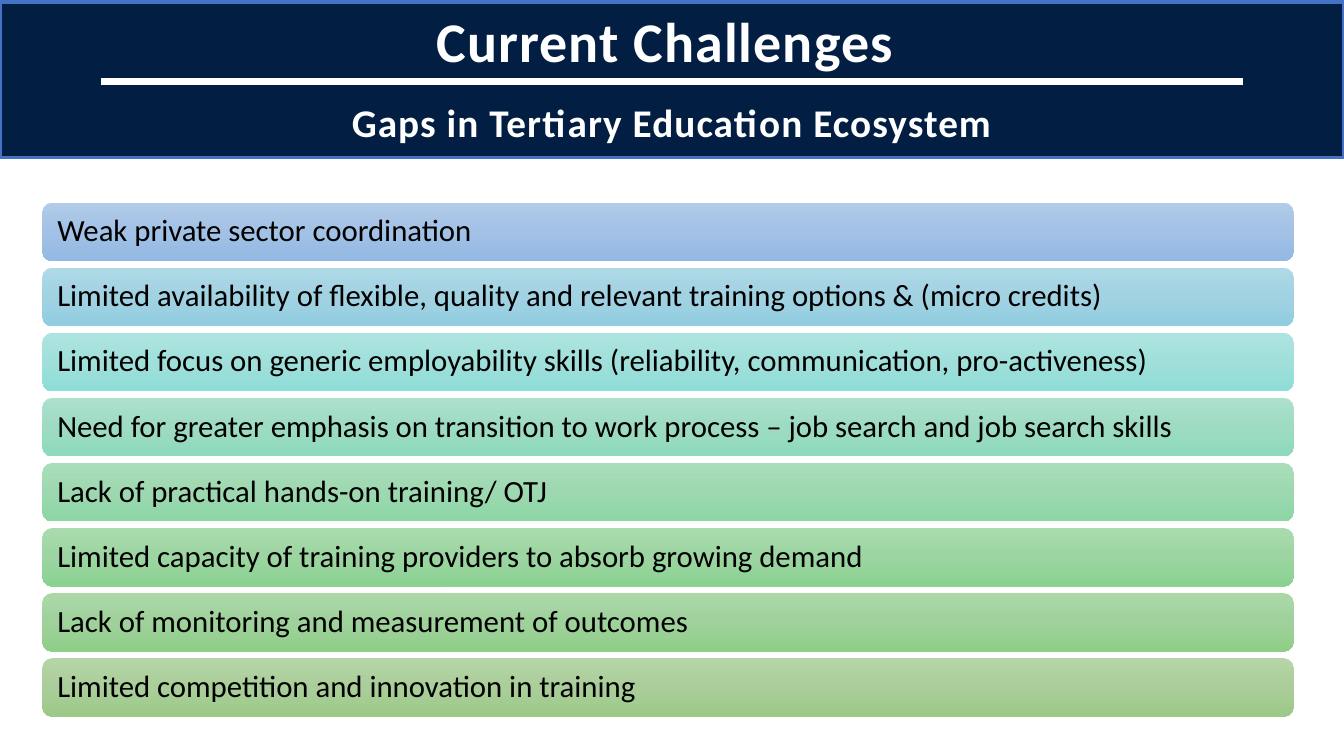
from copy import deepcopy

from lxml.etree import SubElement
from pptx import Presentation
from pptx.dml.color import RGBColor
from pptx.enum.shapes import MSO_CONNECTOR, MSO_SHAPE
from pptx.enum.text import MSO_ANCHOR, PP_ALIGN
from pptx.oxml.ns import qn
from pptx.util import Inches, Pt

COLORS = {
    "navy": "021F43",
    "border": "4472C4",
    "white": "FFFFFF",
    "black": "000000",
}

# Each challenge with the top, middle and bottom colour of its bar
CHALLENGES = [
    ("Weak private sector coordination", ("B1CBE9", "A3C1E5", "93B9E4")),
    ("Limited availability of flexible, quality and relevant training options & (micro credits)",
     ("AFD9E7", "A1D2E2", "90CDE1")),
    ("Limited focus on generic employability skills (reliability, communication, pro-activeness)",
     ("ADE4E0", "A0DFDA", "8EDDD8")),
    ("Need for greater emphasis on transition to work process – job search and job search skills",
     ("ACE1CC", "9EDBC3", "8DDABC")),
    ("Lack of practical hands-on training/ OTJ", ("AADEBB", "9DD8B0", "8BD6A4")),
    ("Limited capacity of training providers to absorb growing demand",
     ("A9DBAE", "9CD5A1", "89D290")),
    ("Lack of monitoring and measurement of outcomes", ("ACD8A8", "9FD19B", "8FCE88")),
    ("Limited competition and innovation in training", ("B5D5A7", "AACE9A", "9CC987")),
]


def set_frame(shape, side, edge):
    shape.shadow.inherit = False
    frame_format = {
        "word_wrap": True,
        "vertical_anchor": MSO_ANCHOR.MIDDLE,
        "margin_left": Inches(side),
        "margin_right": Inches(side),
        "margin_top": Inches(edge),
        "margin_bottom": Inches(edge),
    }
    for name, value in frame_format.items():
        setattr(shape.text_frame, name, value)


def write_line(paragraph, text, size, color, align, spacing, bold=False):
    paragraph.alignment = align
    paragraph.line_spacing = spacing
    run = paragraph.add_run()
    run.text = text
    run.font.color.rgb = RGBColor.from_string(COLORS[color])
    for name, value in {"name": "Calibri", "size": Pt(size), "bold": bold}.items():
        setattr(run.font, name, value)
    return run


prs = Presentation()
prs.slide_width, prs.slide_height = Inches(13.33), Inches(7.5)
slide = prs.slides.add_slide(prs.slide_layouts[6])

# Title banner
banner = slide.shapes.add_shape(
    MSO_SHAPE.RECTANGLE, Inches(0), Inches(0.02), Inches(13.33), Inches(1.54))
banner.fill.solid()
banner.fill.fore_color.rgb = RGBColor.from_string(COLORS["navy"])
banner.line.color.rgb = RGBColor.from_string(COLORS["border"])
banner.line.width = Pt(2.25)
set_frame(banner, 0.07, 0.04)
title = banner.text_frame.paragraphs[0]
subtitle = banner.text_frame.add_paragraph()
for paragraph, text, size, spacing in [
    (title, "Current Challenges ", 40, 0.9),
    (subtitle, "Gaps in Tertiary Education Ecosystem", 28, 1.5),
]:
    run = write_line(paragraph, text, size, "white", PP_ALIGN.CENTER, spacing, bold=True)
    run.font._element.set("spc", "80")

# Rule between title and subtitle
rule = slide.shapes.add_connector(
    MSO_CONNECTOR.STRAIGHT, Inches(1), Inches(0.81), Inches(12.33), Inches(0.81))
rule.line.color.rgb = RGBColor.from_string(COLORS["white"])
rule.line.width = Pt(5)
SubElement(rule._element.spPr, qn("a:effectLst"))

# Challenge bars, evenly spaced from the first top to the last
first_top, last_top = 2.01, 6.53
pitch = (last_top - first_top) / (len(CHALLENGES) - 1)
for row, (challenge, shades) in enumerate(CHALLENGES):
    bar = slide.shapes.add_shape(
        MSO_SHAPE.ROUNDED_RECTANGLE,
        Inches(0.42), Inches(first_top + row * pitch), Inches(12.41), Inches(0.58))
    bar.line.fill.background()
    bar.fill.gradient()
    bar.fill.gradient_angle = 270

    # A gradient starts with two stops; add the middle one
    first_stop = bar._element.spPr.find(".//" + qn("a:gs"))
    first_stop.addnext(deepcopy(first_stop))
    for stop, position, shade in zip(bar.fill.gradient_stops, (0, 0.5, 1), shades):
        stop.position = position
        stop.color.rgb = RGBColor.from_string(shade)

    set_frame(bar, 0.12, 0.09)
    write_line(bar.text_frame.paragraphs[0], challenge, 22, "black", PP_ALIGN.LEFT, 0.9)

prs.save("out.pptx")
